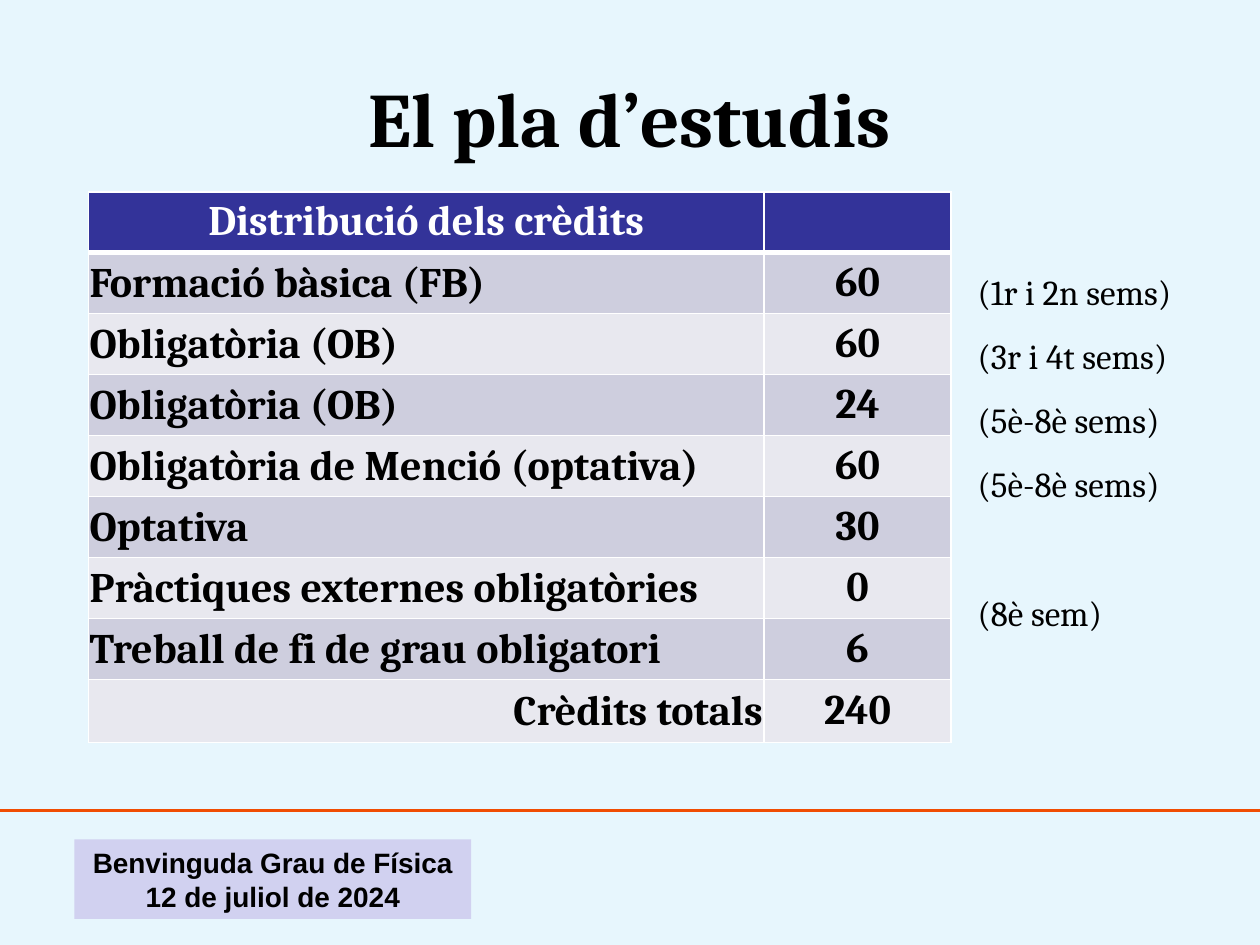
from typing import NamedTuple

from lxml import etree
from pptx import Presentation
from pptx import util as u
from pptx.dml.color import RGBColor
from pptx.enum import shapes, text
from pptx.oxml import ns

SERIF, SANS = "Cambria", "Arial"
BLACK, WHITE = "000000", "FFFFFF"
HEADER_FILL, BANDS = "333399", ("CECEDE", "E8E8EF")
LEFT, CENTER, RIGHT = text.PP_ALIGN.LEFT, text.PP_ALIGN.CENTER, text.PP_ALIGN.RIGHT
TOP, MIDDLE = text.MSO_ANCHOR.TOP, text.MSO_ANCHOR.MIDDLE


class Area(NamedTuple):
    left: float
    top: float
    width: float
    height: float

    def lengths(self) -> list:
        return [u.Pt(value) for value in self]


class Credit(NamedTuple):
    label: str
    credits: str
    align: int = LEFT


class Note(NamedTuple):
    slot: int
    label: str


CREDITS = [
    Credit("Distribució dels crèdits", "", CENTER),
    Credit("Formació bàsica (FB)", "60"),
    Credit("Obligatòria (OB)", "60"),
    Credit("Obligatòria (OB)", "24"),
    Credit("Obligatòria de Menció (optativa)", "60"),
    Credit("Optativa", "30"),
    Credit("Pràctiques externes obligatòries", "0"),
    Credit("Treball de fi de grau obligatori", "6"),
    Credit("Crèdits totals", "240", RIGHT),
]
NOTES = [
    Note(0, "(1r i 2n sems)"),
    Note(1, "(3r i 4t sems)"),
    Note(2, "(5è-8è sems)"),
    Note(3, "(5è-8è sems)"),
    Note(5, "(8è sem)"),
]


def color(value: str) -> RGBColor:
    return RGBColor.from_string(value)


def paint(target, value: str) -> None:
    target.fill.solid()
    target.fill.fore_color.rgb = color(value)


def write(frame, content: str, *, size: float, font: str = SERIF, ink: str = BLACK,
          bold: bool = False, align=LEFT, anchor=TOP) -> None:
    frame.word_wrap = True
    frame.vertical_anchor = anchor
    para = frame.paragraphs[0]
    para.alignment = align
    span = para.add_run()
    span.text = content
    span.font.name, span.font.size, span.font.bold = font, u.Pt(size), bold
    span.font.color.rgb = color(ink)


def set_borders(cell, widths: dict) -> None:
    properties = cell._tc.get_or_add_tcPr()
    for index, (side, width) in enumerate(widths.items()):
        line = etree.Element(ns.qn(f"a:ln{side}"), w=str(u.Pt(width)))
        fill = etree.SubElement(line, ns.qn("a:solidFill"))
        etree.SubElement(fill, ns.qn("a:srgbClr"), val=WHITE)
        properties.insert(index, line)


def add_rule(page, top: float, width: float) -> None:
    rule = page.shapes.add_connector(
        shapes.MSO_CONNECTOR.STRAIGHT, 0, u.Pt(top), u.Pt(width), u.Pt(top))
    rule.line.color.rgb = color("F04C02")
    rule.line.width = u.Pt(1.5)
    etree.SubElement(rule._element.spPr, ns.qn("a:effectLst"))


def add_credit_table(page, area: Area) -> None:
    table = page.shapes.add_table(len(CREDITS), 2, *area.lengths()).table
    for column, width in zip(table.columns, (386, 107)):
        column.width = u.Pt(width)
    for index, (row, credit) in enumerate(zip(table.rows, CREDITS)):
        header = index == 0
        row.height = u.Pt(36 if index == len(CREDITS) - 1 else 34.8)
        label, credits = row.cells
        for cell, content, align in ((label, credit.label, credit.align),
                                     (credits, credit.credits, CENTER)):
            if content:
                write(cell.text_frame, content, size=24, bold=True, align=align,
                      ink=WHITE if header else BLACK)
            cell.vertical_anchor = TOP if header else MIDDLE
            paint(cell, HEADER_FILL if header else BANDS[(index - 1) % 2])
            set_borders(cell, {"L": 1, "R": 1, "T": 3 if index == 1 else 1,
                               "B": 3 if header else 1})
        if not header:
            label.margin_left = label.margin_right = label.margin_top = u.Pt(0.7)
            label.margin_bottom = 0


def add_note(page, note: Note) -> None:
    area = Area(551.5, 151.2 + 36.6 * note.slot, 130.3, 28)
    box = page.shapes.add_textbox(*area.lengths())
    write(box.text_frame, note.label, size=20)


def add_footer(page, area: Area) -> None:
    box = page.shapes.add_shape(shapes.MSO_SHAPE.RECTANGLE, *area.lengths())
    box.shadow.inherit = False
    paint(box, "D1D1F0")
    box.line.fill.background()
    write(box.text_frame, "Benvinguda Grau de Física 12 de juliol de 2024",
          size=16, font=SANS, bold=True, align=CENTER)


def main() -> None:
    deck = Presentation()
    deck.slide_width, deck.slide_height = u.Pt(720), u.Pt(540)
    page = deck.slides.add_slide(deck.slide_layouts[5])
    paint(page.background, "E7F6FD")

    # Title and rule above the footer
    title = page.shapes.title
    title.left, title.top, title.width, title.height = Area(36, 21.6, 648, 90).lengths()
    write(title.text_frame, "El pla d’estudis", size=44, bold=True,
          align=CENTER, anchor=MIDDLE)
    add_rule(page, 463, 720)

    # Credits, with the semesters beside them
    add_credit_table(page, Area(50.5, 109.6, 493, 314.4))
    for note in NOTES:
        add_note(page, note)

    # Footer
    add_footer(page, Area(42.5, 479.7, 226.8, 45.4))
    deck.save("out.pptx")


if __name__ == "__main__":
    main()
